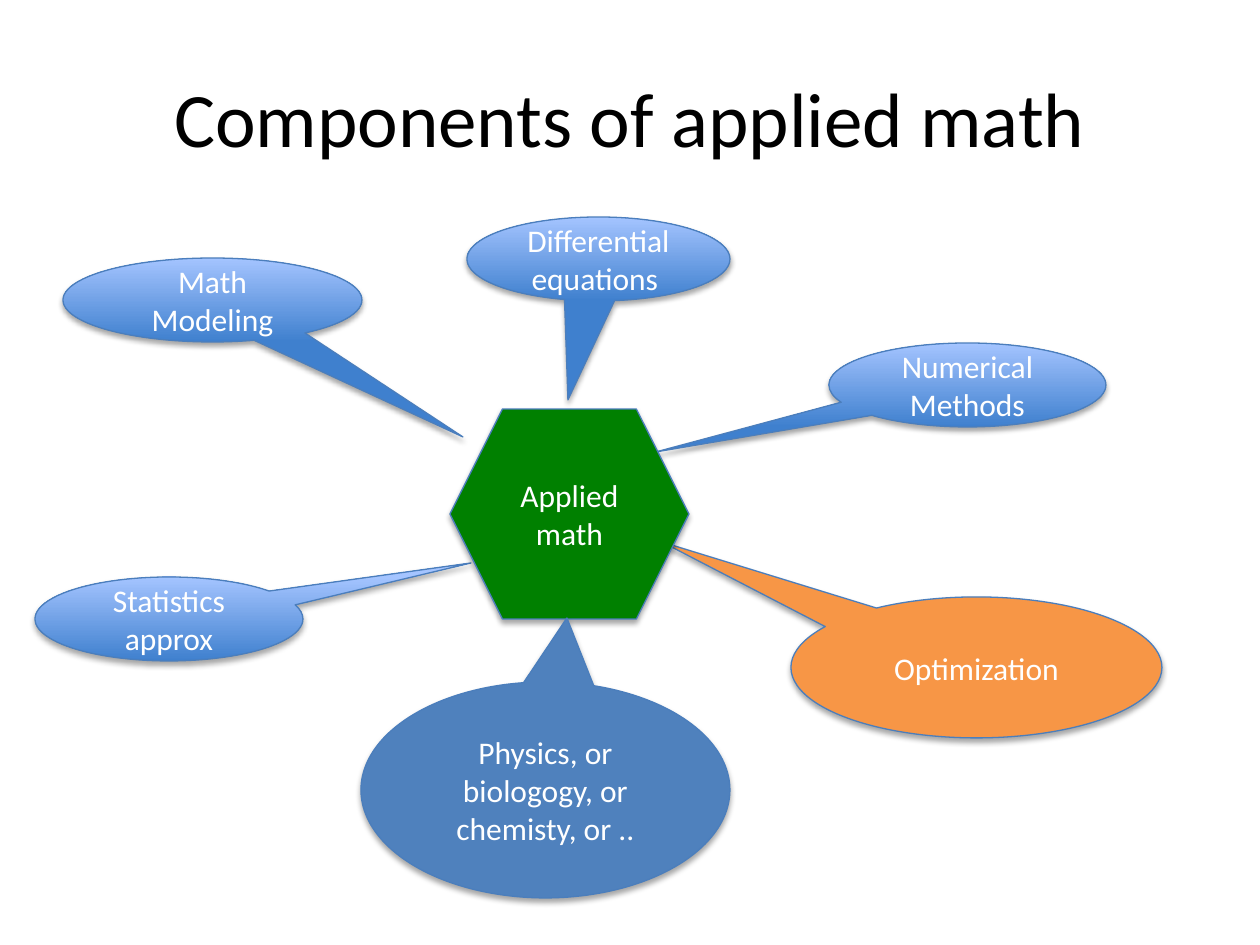
"""Build a slide that maps the components of applied math."""
from lxml.etree import SubElement
from pptx import Presentation
from pptx.dml.color import RGBColor
from pptx.enum.shapes import MSO_SHAPE
from pptx.enum.text import MSO_ANCHOR, PP_ALIGN
from pptx.oxml.ns import qn
from pptx.util import Pt

PX = 914400 // 126
COLORS = {
    "ink": "000000", "white": "FFFFFF", "edge": "4B7EBC",
    "orange": "F79646", "green": "008000", "blue": "4F81BD",
    "deep": "3F80CE", "pale": "A4C4FF",
}
TITLE = ("Components of applied math", (63, 38, 1134, 157))
HUB = ("Applied math", (450, 409, 239, 210), "green")
FADE = ("deep", "pale")
UNDER = [
    ("Optimization", (791, 597, 371, 141), (662, 542), "orange"),
    ("Numerical Methods", (829, 343, 277, 84), (656, 452), FADE),
    ("Differential equations ", (467, 217, 263, 84), (568, 400), FADE),
    ("Math Modeling", (63, 258, 299, 84), (463, 437), FADE),
    ("Statistics\napprox", (35, 577, 268, 84), (471, 563), FADE),
]
OVER = ("Physics, or biologogy, or chemisty, or ..",
        (361, 682, 369, 216), (567, 618), "blue")


def color(name):
    return RGBColor.from_string(COLORS[name])


def scale(box):
    return [n * PX for n in box]


def write(shape, text, size, ink):
    frame = shape.text_frame
    frame.text = text
    frame.word_wrap = True
    frame.vertical_anchor = MSO_ANCHOR.MIDDLE
    for para in frame.paragraphs:
        para.alignment = PP_ALIGN.CENTER
        for run in para.runs:
            run.font.name = "Calibri"
            run.font.size = Pt(size)
            run.font.color.rgb = color(ink)


def paint(shape, fill):
    if isinstance(fill, str):
        shape.fill.solid()
        shape.fill.fore_color.rgb = color(fill)
        return
    shape.fill.gradient()
    shape.fill.gradient_angle = 90
    for stop, name in zip(shape.fill.gradient_stops, fill):
        stop.color.rgb = color(name)


def shade(shape):
    shape.shadow.inherit = False
    effects = shape.element.spPr.find(qn("a:effectLst"))
    outer = SubElement(effects, qn("a:outerShdw"), blurRad=str(Pt(3.1)),
                       dist=str(Pt(1.8)), dir="5400000", rotWithShape="0")
    black = SubElement(outer, qn("a:srgbClr"), val=COLORS["ink"])
    SubElement(black, qn("a:alpha"), val="35000")


def add_node(slide, kind, text, box, fill):
    shape = slide.shapes.add_shape(kind, *scale(box))
    paint(shape, fill)
    shape.line.color.rgb = color("edge")
    shape.line.width = Pt(0.75)
    shade(shape)
    write(shape, text, 18, "white")
    return shape


def add_callout(slide, text, box, tip, fill):
    shape = add_node(slide, MSO_SHAPE.OVAL_CALLOUT, text, box, fill)
    left, top, width, height = box
    shape.adjustments[0] = (tip[0] - left) / width - 0.5
    shape.adjustments[1] = (tip[1] - top) / height - 0.5


def main():
    deck = Presentation()
    deck.slide_width, deck.slide_height = scale((1260, 945))
    slide = deck.slides.add_slide(deck.slide_layouts[6])
    text, box = TITLE
    write(slide.shapes.add_textbox(*scale(box)), text, 44, "ink")
    for item in UNDER:
        add_callout(slide, *item)
    add_node(slide, MSO_SHAPE.HEXAGON, *HUB)
    add_callout(slide, *OVER)
    deck.save("out.pptx")


if __name__ == "__main__":
    main()
